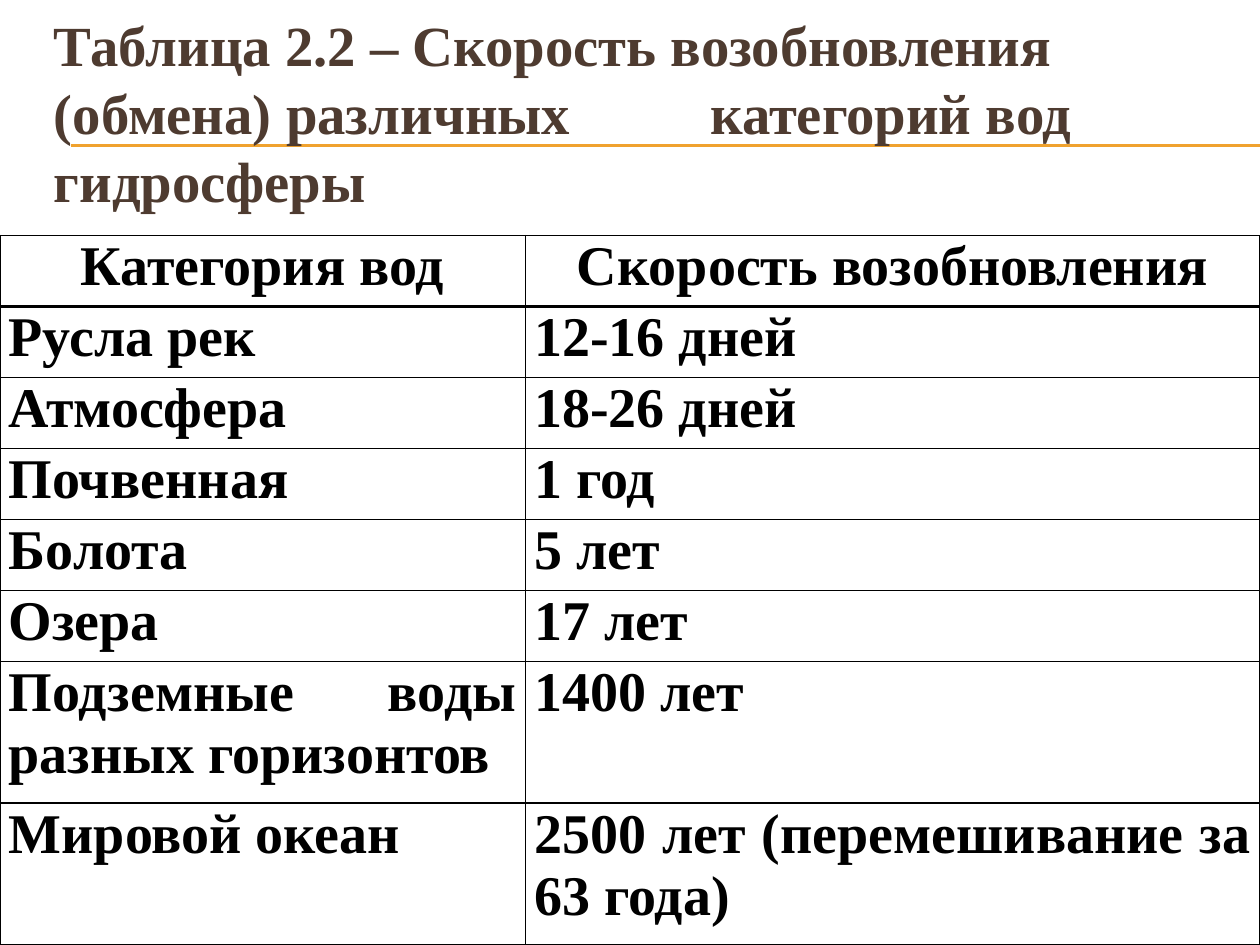
from lxml.etree import SubElement
from pptx import Presentation
from pptx.dml.color import RGBColor
from pptx.enum.shapes import MSO_CONNECTOR
from pptx.enum.text import MSO_ANCHOR, PP_ALIGN
from pptx.oxml.ns import qn
from pptx.util import Inches, Pt

BLACK = RGBColor(0x00, 0x00, 0x00)
BROWN = RGBColor(0x4E, 0x3B, 0x30)
GOLD = RGBColor(0xF0, 0xA2, 0x2E)
FONT = "Times New Roman"

ROWS = [
    ("Категория вод", "Скорость возобновления"),
    ("Русла рек", "12-16 дней"),
    ("Атмосфера", "18-26 дней"),
    ("Почвенная", "1 год"),
    ("Болота", "5 лет"),
    ("Озера", "17 лет"),
    ("Подземные воды разных горизонтов", "1400 лет"),
    ("Мировой океан", "2500 лет (перемешивание за 63 года)"),
]
TALL = 2  # number of double-height rows at the bottom


def add_run(para, text, size, color):
    run = para.add_run()
    run.text = text
    font = run.font
    font.name, font.size, font.bold = FONT, Pt(size), True
    font.color.rgb = color


def add_rules(slide, left, top, width):
    """Draw the two thin, nearly touching lines behind the title."""
    for y in (top, top + Inches(0.01)):
        rule = slide.shapes.add_connector(
            MSO_CONNECTOR.STRAIGHT, left, y, left + width, y)
        rule.line.color.rgb = GOLD
        rule.line.width = Pt(0.75)
        SubElement(rule._element.spPr, qn("a:effectLst"))


def add_title(slide, left, top, width, height):
    frame = slide.shapes.add_textbox(left, top, width, height).text_frame
    frame.word_wrap = True
    frame.vertical_anchor = MSO_ANCHOR.TOP
    frame.margin_top = frame.margin_bottom = 0
    para = frame.paragraphs[0]
    para.line_spacing = Pt(38.9)
    tabs = SubElement(para._p.get_or_add_pPr(), qn("a:tabLst"))
    SubElement(tabs, qn("a:tab"), pos=str(Inches(5.21)), algn="l")
    add_run(para, "Таблица 2.2 – Скорость возобновления (обмена) различных\t"
            "категорий вод гидросферы", 32.4, BROWN)


def set_border(cell, side, points):
    line = SubElement(cell._tc.get_or_add_tcPr(), qn(f"a:ln{side}"),
                      w=str(Pt(points)))
    fill = SubElement(line, qn("a:solidFill"))
    SubElement(fill, qn("a:srgbClr"), val=str(BLACK))


def fill_cell(cell, text, align, top, bottom):
    cell.margin_left = cell.margin_right = Inches(0.07)
    cell.margin_top = cell.margin_bottom = 0
    for side, points in (("L", 1), ("R", 1), ("T", top), ("B", bottom)):
        set_border(cell, side, points)
    cell.fill.background()
    para = cell.text_frame.paragraphs[0]
    para.alignment = align
    add_run(para, text, 32, BLACK)


def add_rates(slide, left, top, width, height):
    count = len(ROWS)
    table = slide.shapes.add_table(
        count, 2, left, top, width, height).table
    table.horz_banding = False
    table.columns[0].width = Inches(4.17)
    table.columns[1].width = width - Inches(4.17)
    unit = height // (count + TALL)
    for r, texts in enumerate(ROWS):
        table.rows[r].height = unit * (2 if r >= count - TALL else 1)
        align = PP_ALIGN.JUSTIFY if r else PP_ALIGN.CENTER
        for c, text in enumerate(texts):
            fill_cell(table.cell(r, c), text, align,
                      top=1.5 if r == 1 else 1,
                      bottom=1.5 if r == 0 else 1)


def main():
    deck = Presentation()
    deck.slide_width, deck.slide_height = Inches(10), Inches(7.5)
    slide = deck.slides.add_slide(deck.slide_layouts[6])
    add_rules(slide, Inches(0.56), Inches(1.15), Inches(9.44))
    add_title(slide, Inches(0.33), Inches(0.08), Inches(9.5), Inches(1.64))
    add_rates(slide, 0, Inches(1.87), Inches(10), Inches(5.63))
    deck.save("out.pptx")


if __name__ == "__main__":
    main()
